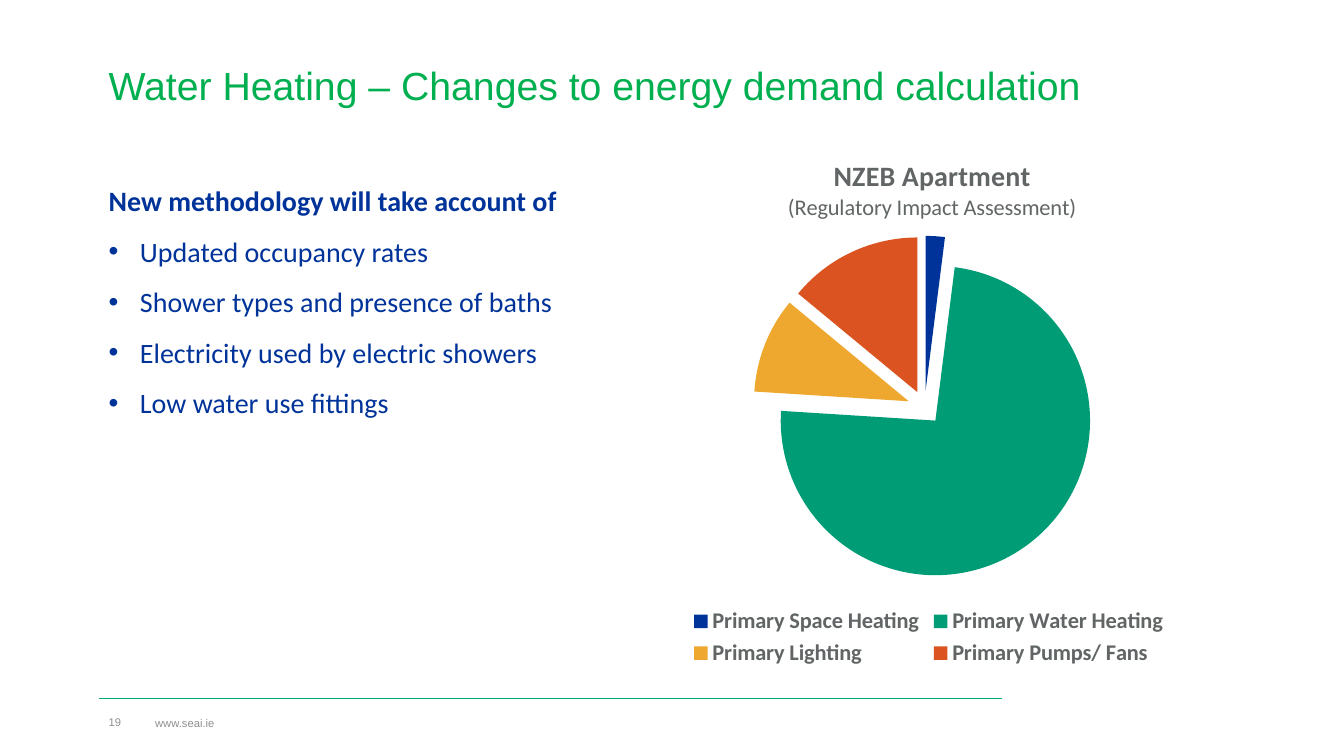
"""Build the slide on changes to the water heating energy demand calculation."""
from lxml import etree
from pptx import Presentation
from pptx.chart.data import CategoryChartData
from pptx.dml.color import RGBColor
from pptx.enum.chart import XL_CHART_TYPE, XL_LEGEND_POSITION
from pptx.enum.shapes import MSO_CONNECTOR
from pptx.enum.text import MSO_ANCHOR, PP_ALIGN
from pptx.oxml import parse_xml
from pptx.oxml.ns import nsdecls, qn
from pptx.util import Inches, Pt

PIE = XL_CHART_TYPE.PIE
LEGEND_BOTTOM = XL_LEGEND_POSITION.BOTTOM
STRAIGHT = MSO_CONNECTOR.STRAIGHT
MIDDLE = MSO_ANCHOR.MIDDLE
CENTER = PP_ALIGN.CENTER

TITLE_GREEN = RGBColor(0x00, 0xB0, 0x50)
RULE_GREEN = RGBColor(0x00, 0xAC, 0x75)
NAVY = RGBColor(0x00, 0x33, 0x99)
TEAL = RGBColor(0x00, 0x9C, 0x75)
AMBER = RGBColor(0xEF, 0xA8, 0x2F)
ORANGE = RGBColor(0xDA, 0x53, 0x20)
CHART_GREY = RGBColor(0x61, 0x65, 0x65)
FOOTER_GREY = RGBColor(0x8E, 0x8F, 0x8F)


def style_font(font, name, size, color, bold=False):
    font.name = name
    font.size = Pt(size)
    font.color.rgb = color
    font.bold = bold


def add_text(slide, left, top, width, height, lines, name, size, color):
    box = slide.shapes.add_textbox(Inches(left), Inches(top), Inches(width), Inches(height))
    text_frame = box.text_frame
    text_frame.word_wrap = True
    text_frame.text = "\n".join(lines)
    for paragraph in text_frame.paragraphs:
        for run in paragraph.runs:
            style_font(run.font, name, size, color)
    return text_frame


presentation = Presentation()
presentation.slide_width = Inches(13.33)
presentation.slide_height = Inches(7.5)
slide = presentation.slides.add_slide(presentation.slide_layouts[6])

footer_rule = slide.shapes.add_connector(
    STRAIGHT, Inches(9.94), Inches(6.93), Inches(0.98), Inches(6.93))
footer_rule.line.color.rgb = RULE_GREEN
footer_rule.line.width = Pt(0.5)
etree.SubElement(footer_rule.element.spPr, qn("a:effectLst"))

add_text(slide, 0.98, 7.05, 0.46, 0.27, ["19"], "Arial", 8, FOOTER_GREY)
website = add_text(slide, 1.44, 7.07, 4.22, 0.2, ["www.seai.ie"], "Arial", 8, FOOTER_GREY)
website.vertical_anchor = MIDDLE
website.margin_top = website.margin_bottom = 0

title = add_text(slide, 0.98, 0.61, 11.02, 1,
                 ["Water Heating – Changes to energy demand calculation"],
                 "Arial", 28, TITLE_GREEN)
title.paragraphs[0].line_spacing = 0.9

methodology = add_text(slide, 0.98, 1.61, 7.16, 2.57, [
    "New methodology will take account of",
    "Updated occupancy rates",
    "Shower types and presence of baths",
    "Electricity used by electric showers",
    "Low water use fittings",
], "Calibri", 20, NAVY)
for index, paragraph in enumerate(methodology.paragraphs):
    paragraph.line_spacing = 1.5
    if index == 0:
        paragraph.runs[0].font.bold = True
        continue
    properties = paragraph._p.get_or_add_pPr()
    properties.set("marL", str(Inches(0.31)))
    properties.set("indent", str(-Inches(0.31)))
    etree.SubElement(properties, qn("a:buFont")).set("typeface", "Arial")
    etree.SubElement(properties, qn("a:buChar")).set("char", "•")

energy_data = CategoryChartData()
energy_data.categories = ["Primary Space Heating", "Primary Water Heating",
                          "Primary Lighting", "Primary Pumps/ Fans"]
energy_data.add_series("Series 1", (2, 74, 10, 14))
chart = slide.shapes.add_chart(
    PIE, Inches(5.25), Inches(1.32), Inches(7.92), Inches(5.34), energy_data).chart
style_font(chart.font, "Arial", 10, CHART_GREY)

chart_title = chart.chart_title.text_frame
chart_title.text = "NZEB Apartment\n(Regulatory Impact Assessment)"
for paragraph, size, bold in zip(chart_title.paragraphs, (20, 16), (True, False)):
    paragraph.alignment = CENTER
    style_font(paragraph.runs[0].font, "Calibri", size, CHART_GREY, bold)

chart.has_legend = True
chart.legend.position = LEGEND_BOTTOM
chart.legend.include_in_layout = False
style_font(chart.legend.font, "Calibri", 16, CHART_GREY, True)

plot = chart.plots[0]
plot.vary_by_categories = True
series = plot.series[0]
for index, color in enumerate((NAVY, TEAL, AMBER, ORANGE)):
    fill = series.points[index].format.fill
    fill.solid()
    fill.fore_color.rgb = color
explosion = parse_xml(f'<c:explosion {nsdecls("c")} val="11"/>')
series._element.find(qn("c:dPt")).addprevious(explosion)

title_layout = {"xMode": "edge", "yMode": "edge", "x": 0.32, "y": 0.04}
pie_layout = {"layoutTarget": "inner", "xMode": "edge", "yMode": "edge",
              "x": 0.28, "y": 0.19, "w": 0.43, "h": 0.64}
chart_element = chart._chartSpace.chart
for parent, settings in ((chart_element.find(qn("c:title")), title_layout),
                         (chart_element.plotArea, pie_layout)):
    layout = parent.find(qn("c:layout"))
    if layout is None:
        layout = parse_xml(f'<c:layout {nsdecls("c")}/>')
        parent.insert(1 if settings is title_layout else 0, layout)
    manual_layout = etree.SubElement(layout, qn("c:manualLayout"))
    for key, value in settings.items():
        etree.SubElement(manual_layout, qn(f"c:{key}")).set("val", str(value))

presentation.save("out.pptx")
